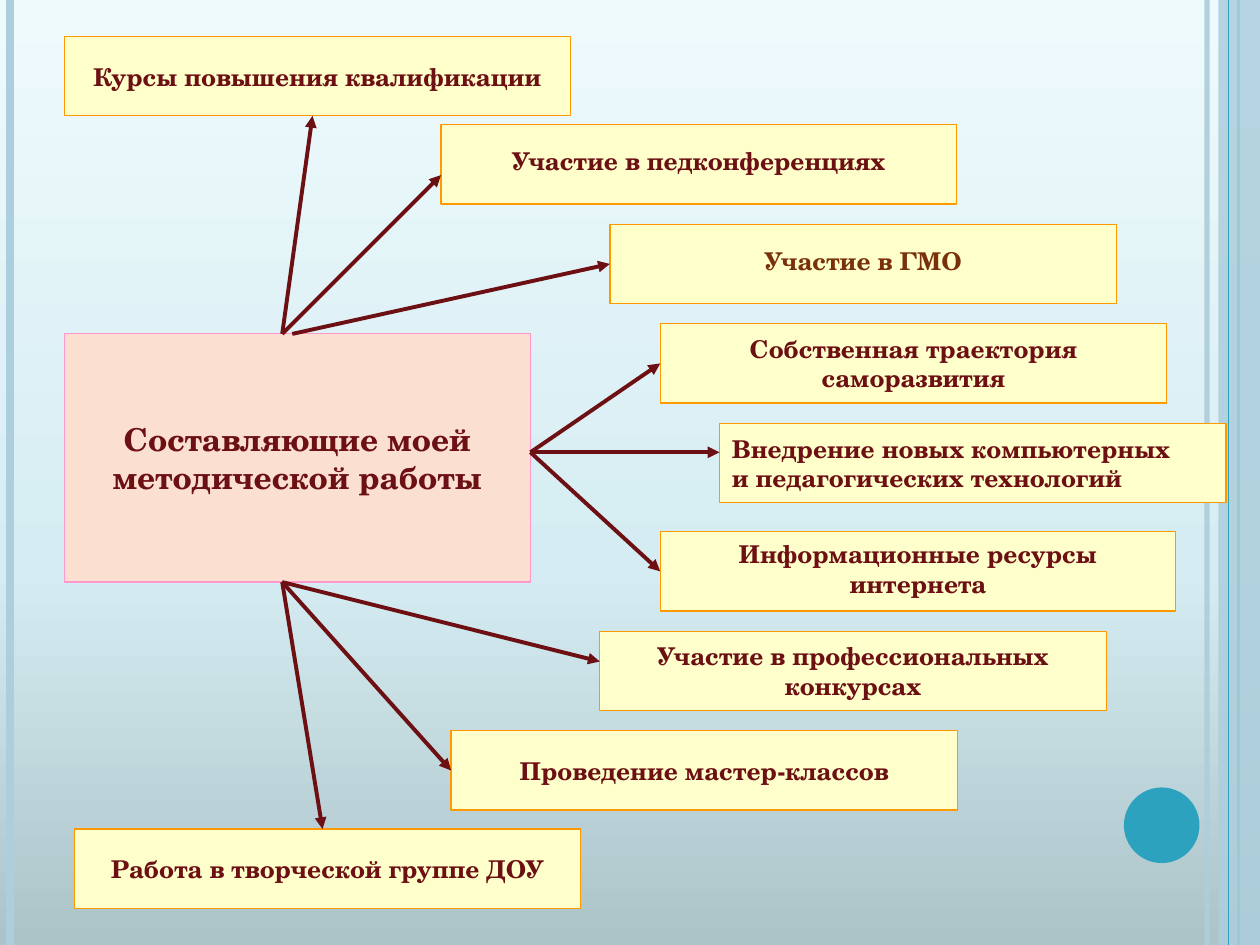
from copy import deepcopy

from lxml.etree import SubElement
from pptx import Presentation
from pptx.dml.color import RGBColor
from pptx.enum.shapes import MSO_CONNECTOR as Connector, MSO_SHAPE as Shape
from pptx.enum.text import MSO_ANCHOR as Anchor, PP_ALIGN as Align
from pptx.oxml.ns import qn
from pptx.util import Inches, Pt

THEME = {
    "font": "TeX Gyre Schola",
    "hub_size": 18,
    "topic_size": 14,
    "text": "6D1014",
    "text_brown": "78310B",
    "hub_fill": "FBE0D1",
    "hub_line": "FF99CC",
    "topic_fill": "FFFFCC",
    "topic_line": "FF9900",
    "accent": "2DA2BF",
    "pale": "ADCEDC",
    "background": [(0, "ACC3C8"), (0.4, "D5EDF2"), (1, "EFFAFD")],
    "box_line": 0.75,
    "arrow_line": 2.25,
}

SLIDE_WIDTH, SLIDE_HEIGHT = 10, 7.5
LEFT_SIDE = 1

# x, colour, width in points, opacity in percent
STRIPES_BEHIND = [(9.58, "pale", 3, 93), (0.08, "pale", 4.5, 100), (9.83, "accent", 1.5, 100)]
STRIPE_FRONT = (9.75, "accent", 0.75, 100)
SIDE_BAND = (9.67, 0, 0.33, SLIDE_HEIGHT)
CIRCLE = (8.92, 6.25, 0.6, 0.6)

HUB_BOX = (0.51, 2.65, 3.7, 1.97)
HUB_LINES = ["Составляющие моей", "методической работы"]
HUB_EXITS = {"top": (2.24, 2.65), "top right": (2.32, 2.65), "right": (4.21, 3.59), "bottom": (2.24, 4.62)}

# Topics run down the slide at an equal pitch.
TOPIC_TOP, TOPIC_PITCH = 0.29, 0.79
TOPIC_WIDTH, TOPIC_HEIGHT = 4.02, 0.63
# "end" is the arrow tip; without it the arrow joins the middle of the left side.
TOPICS = [
    {"lines": ["Курсы повышения квалификации"], "left": 0.51, "exit": "top", "end": (2.48, 0.92)},
    {"lines": ["Участие в педконференциях"], "left": 3.5, "width": 4.09, "top": 0.99,
     "exit": "top", "end": (3.5, 1.39), "lift": 0.05},
    {"lines": ["Участие в ГМО"], "left": 4.84, "top": 1.78, "exit": "top right",
     "colour": "text_brown", "lift": 0.05},
    {"lines": ["Собственная траектория", "саморазвития"], "left": 5.24, "top": 2.57, "exit": "right"},
    {"lines": ["Внедрение новых компьютерных", "и педагогических технологий"],
     "left": 5.71, "top": 3.36, "exit": "right", "end": (5.71, 3.59), "align": Align.LEFT},
    {"lines": ["Информационные ресурсы", "интернета"], "left": 5.24, "width": 4.09, "top": 4.22,
     "exit": "right", "lift": 0.04},
    {"lines": ["Участие в профессиональных", "конкурсах"], "left": 4.76, "top": 5.01,
     "exit": "bottom", "end": (4.76, 5.25)},
    {"lines": ["Проведение мастер-классов"], "left": 3.58, "top": 5.8, "exit": "bottom"},
    {"lines": ["Работа в творческой группе ДОУ"], "left": 0.59, "top": 6.58,
     "exit": "bottom", "end": (2.56, 6.58)},
]


def rgb(name):
    return RGBColor.from_string(THEME.get(name, name))


def set_opacity(shape, percent):
    """Make the first colour of the shape (its fill, or a connector's line) see-through."""
    colour = shape.element.spPr.find(".//" + qn("a:srgbClr"))
    SubElement(colour, qn("a:alpha")).set("val", str(percent * 1000))


def paint_background(slide):
    fill = slide.background.fill
    fill.gradient()
    fill.gradient_angle = 90
    stop_list = slide.element.find(".//" + qn("a:gsLst"))
    stop_list.append(deepcopy(stop_list[-1]))
    for stop, (position, colour) in zip(fill.gradient_stops, THEME["background"]):
        stop.position = position
        stop.color.rgb = rgb(colour)


def add_line(slide, start, end, colour, width):
    connector = slide.shapes.add_connector(
        Connector.STRAIGHT, *(Inches(value) for value in (*start, *end)))
    connector.line.color.rgb = rgb(colour)
    connector.line.width = Pt(width)
    SubElement(connector.element.spPr, qn("a:effectLst"))
    return connector


def add_stripe(slide, x, colour, width, opacity):
    stripe = add_line(slide, (x, 0), (x, SLIDE_HEIGHT), colour, width)
    if opacity < 100:
        set_opacity(stripe, opacity)


def add_filled(slide, kind, box, fill, line=None):
    shape = slide.shapes.add_shape(kind, *(Inches(value) for value in box))
    shape.shadow.inherit = False
    shape.fill.solid()
    shape.fill.fore_color.rgb = rgb(fill)
    if line:
        shape.line.color.rgb = rgb(line)
        shape.line.width = Pt(THEME["box_line"])
    else:
        shape.line.fill.background()
    return shape


def write_lines(shape, lines, size, colour="text", align=Align.CENTER, lift=0):
    """Fill the shape with one paragraph a line; lift deepens the bottom margin."""
    frame = shape.text_frame
    frame_format = {
        "word_wrap": True,
        "vertical_anchor": Anchor.MIDDLE,
        "margin_bottom": Inches(0.05 + lift),
    }
    for name, value in frame_format.items():
        setattr(frame, name, value)
    frame.text = "\n".join(lines)
    font_format = {"name": THEME["font"], "size": Pt(THEME[size]), "bold": True}
    for paragraph in frame.paragraphs:
        paragraph.alignment = align
        font = paragraph.runs[0].font
        for name, value in font_format.items():
            setattr(font, name, value)
        font.color.rgb = rgb(colour)


def add_topic(slide, topic, default_top):
    box = (topic["left"], topic.get("top", default_top), topic.get("width", TOPIC_WIDTH), TOPIC_HEIGHT)
    shape = add_filled(slide, Shape.RECTANGLE, box, "topic_fill", "topic_line")
    text_format = {key: topic[key] for key in ("colour", "align", "lift") if key in topic}
    write_lines(shape, topic["lines"], "topic_size", **text_format)
    return shape


def add_arrow(slide, topic, topic_shape):
    start = HUB_EXITS[topic["exit"]]
    arrow = add_line(slide, start, topic.get("end", start), "text", THEME["arrow_line"])
    if "end" not in topic:
        arrow.end_connect(topic_shape, LEFT_SIDE)
    line = arrow.element.spPr.find(qn("a:ln"))
    SubElement(line, qn("a:tailEnd")).set("type", "triangle")


def main():
    presentation = Presentation()
    presentation.slide_width = Inches(SLIDE_WIDTH)
    presentation.slide_height = Inches(SLIDE_HEIGHT)
    slide = presentation.slides.add_slide(presentation.slide_layouts[6])

    paint_background(slide)
    for stripe in STRIPES_BEHIND:
        add_stripe(slide, *stripe)
    set_opacity(add_filled(slide, Shape.RECTANGLE, SIDE_BAND, "pale"), 87)
    add_stripe(slide, *STRIPE_FRONT)
    add_filled(slide, Shape.OVAL, CIRCLE, "accent")

    hub = add_filled(slide, Shape.RECTANGLE, HUB_BOX, "hub_fill", "hub_line")
    write_lines(hub, HUB_LINES, "hub_size")
    topic_shapes = [add_topic(slide, topic, TOPIC_TOP + index * TOPIC_PITCH)
                    for index, topic in enumerate(TOPICS)]
    for topic, topic_shape in zip(TOPICS, topic_shapes):
        add_arrow(slide, topic, topic_shape)

    presentation.save("out.pptx")


if __name__ == "__main__":
    main()
